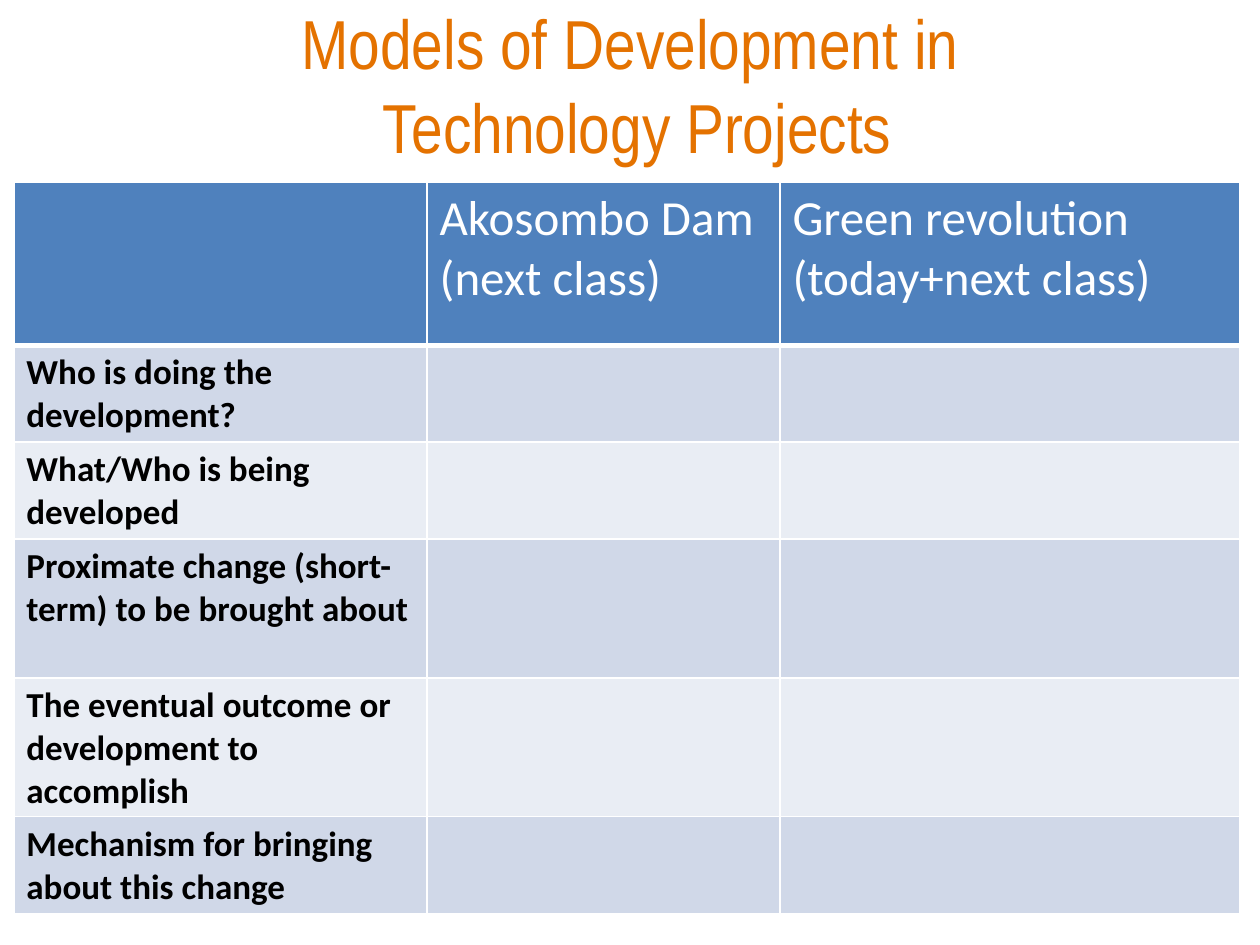
import pptx
import pptx.util
import pptx.dml.color
import pptx.enum.text
import pptx.oxml
import pptx.oxml.ns
from dataclasses import dataclass

Inches, Pt = pptx.util.Inches, pptx.util.Pt
RGB = pptx.dml.color.RGBColor.from_string


@dataclass(frozen=True)
class Theme:
    title_font: str = "Arial Narrow"
    body_font: str = "Calibri"
    title_color: str = "E47200"
    header_fill: str = "4F81BD"
    header_text: str = "FFFFFF"
    label_text: str = "000000"
    border: str = "FFFFFF"
    bands: tuple = ("D0D8E8", "E9EDF4")
    title_size: float = 39.6
    header_size: float = 28
    label_size: float = 20


theme = Theme()


def style_text(tf, font, size, color, bold=False):
    for p in tf.paragraphs:
        for r in p.runs:
            r.font.name = font
            r.font.size = Pt(size)
            r.font.color.rgb = RGB(color)
            r.font.bold = bold


def add_border(cell, side, width):
    """Append one solid border; sides must come in the order L, R, T, B, before the fill."""
    cell._tc.get_or_add_tcPr().append(pptx.oxml.parse_xml(
        f'<a:ln{side} {pptx.oxml.ns.nsdecls("a")} w="{Pt(width)}"><a:solidFill>'
        f'<a:srgbClr val="{theme.border}"/></a:solidFill></a:ln{side}>'))


prs = pptx.Presentation()
prs.slide_width, prs.slide_height = Inches(10), Inches(7.5)
s = prs.slides.add_slide(prs.slide_layouts[6])

# Title
title = s.shapes.add_textbox(Inches(0.5), Inches(0.04), Inches(9), Inches(1.25))
tf = title.text_frame
tf.word_wrap = True
tf.vertical_anchor = pptx.enum.text.MSO_ANCHOR.MIDDLE
p = tf.paragraphs[0]
p.text = "Models of Development in\v Technology Projects"
p.alignment = pptx.enum.text.PP_ALIGN.CENTER
style_text(tf, theme.title_font, theme.title_size, theme.title_color)

# Comparison table: questions down the side, projects across the top
headers = ["", "Akosombo Dam (next class)", "Green revolution\n(today+next class)"]
questions = [
    "Who is doing the development?",
    "What/Who is being developed",
    "Proximate change (short-term) to be brought about",
    "The eventual outcome or development to accomplish",
    "Mechanism for bringing about this change",
]
col_widths = [3.28, 2.8, 3.65]
row_heights = [1.29, 0.77, 0.77, 1.1, 1.1, 0.77]

table = s.shapes.add_table(
    len(row_heights), len(col_widths), Inches(0.11), Inches(1.45),
    Inches(sum(col_widths)), Inches(sum(row_heights))).table
for column, width in zip(table.columns, col_widths):
    column.width = Inches(width)
for row, height in zip(table.rows, row_heights):
    row.height = Inches(height)

for col, header in enumerate(headers):
    cell = table.cell(0, col)
    for side, width in (("L", 1), ("R", 1), ("T", 1), ("B", 3)):
        add_border(cell, side, width)
    cell.fill.solid()
    cell.fill.fore_color.rgb = RGB(theme.header_fill)
    cell.text_frame.text = header
    style_text(cell.text_frame, theme.body_font, theme.header_size, theme.header_text)

for row, question in enumerate(questions, start=1):
    for col in range(len(headers)):
        cell = table.cell(row, col)
        cell.fill.solid()
        cell.fill.fore_color.rgb = RGB(theme.bands[(row - 1) % 2])
    label = table.cell(row, 0).text_frame
    label.text = question
    style_text(label, theme.body_font, theme.label_size, theme.label_text, bold=True)

prs.save("out.pptx")
